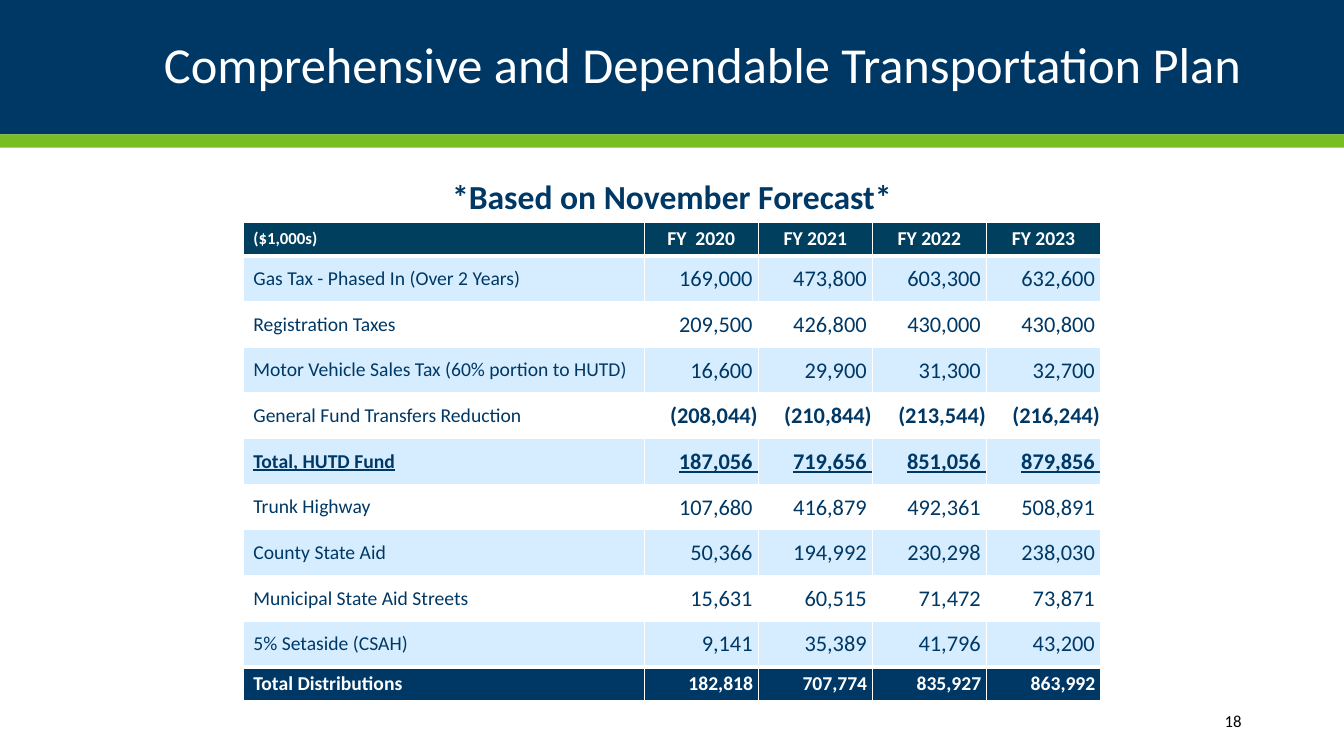
import pptx
import pptx.dml.color
import pptx.enum.shapes
import pptx.enum.text
import pptx.oxml
import pptx.oxml.ns
import pptx.util

Pt = pptx.util.Pt
ALIGN = pptx.enum.text.PP_ALIGN
MIDDLE = pptx.enum.text.MSO_ANCHOR.MIDDLE

NAVY, GREEN, WHITE = "003865", "78BE21", "FFFFFF"
HEADER_FILL, BAND_FILL = "003F5E", "D6EDFF"

YEARS = ["FY  2020", "FY 2021", "FY 2022", "FY 2023"]
FUNDS = [
    ("Gas Tax - Phased In (Over 2 Years)", "169,000 ", "473,800 ", "603,300 ", "632,600 "),
    ("Registration Taxes", "209,500 ", "426,800 ", "430,000 ", "430,800 "),
    ("Motor Vehicle Sales Tax (60% portion to HUTD)", "16,600 ", "29,900 ", "31,300 ", "32,700 "),
    ("General Fund Transfers Reduction", "(208,044)", "(210,844)", "(213,544)", "(216,244)"),
    ("Total, HUTD Fund", "187,056 ", "719,656 ", "851,056 ", "879,856 "),
    ("Trunk Highway", "107,680 ", "416,879 ", "492,361 ", "508,891 "),
    ("County State Aid", "50,366 ", "194,992 ", "230,298 ", "238,030 "),
    ("Municipal State Aid Streets", "15,631 ", "60,515 ", "71,472 ", "73,871 "),
    ("5% Setaside (CSAH)", "9,141 ", "35,389 ", "41,796 ", "43,200 "),
]
TOTALS = ("Total Distributions", "182,818 ", "707,774 ", "835,927 ", "863,992 ")


def rgb(color):
    return pptx.dml.color.RGBColor.from_string(color)


def write(tf, text, size=14, color=NAVY, bold=False, underline=False,
          align=ALIGN.LEFT, spacing=None):
    p = tf.paragraphs[0]
    p.alignment = align
    p.line_spacing = spacing
    r = p.add_run()
    r.text = text
    r.font.name = "Calibri"
    r.font.size = Pt(size)
    r.font.bold = bold
    r.font.underline = underline
    r.font.color.rgb = rgb(color)


def add_bar(s, top, height, color):
    """Draw a full-width band behind the title."""
    sp = s.shapes.add_shape(pptx.enum.shapes.MSO_SHAPE.RECTANGLE,
                            0, Pt(top), Pt(960), Pt(height))
    sp.shadow.inherit = False
    sp.fill.solid()
    sp.fill.fore_color.rgb = rgb(color)
    sp.line.fill.background()
    s.shapes.title.element.addprevious(sp.element)


def add_title(s, text):
    sp = s.shapes.title
    sp.left, sp.top, sp.width, sp.height = Pt(66), Pt(12), Pt(828), Pt(72)
    tf = sp.text_frame
    tf.auto_size = pptx.enum.text.MSO_AUTO_SIZE.NONE
    tf.vertical_anchor = MIDDLE
    write(tf, text, size=36, color=WHITE, align=ALIGN.RIGHT, spacing=0.9)


def add_text(s, left, top, width, height, text, anchor=None, **style):
    tf = s.shapes.add_textbox(Pt(left), Pt(top), Pt(width), Pt(height)).text_frame
    tf.word_wrap = True
    tf.vertical_anchor = anchor
    write(tf, text, **style)


def set_borders(cell, top, bottom):
    tc_pr = cell._tc.get_or_add_tcPr()
    for side, width in (("L", 1), ("R", 1), ("T", top), ("B", bottom)):
        tc_pr.append(pptx.oxml.parse_xml(
            f'<a:ln{side} {pptx.oxml.ns.nsdecls("a")} w="{Pt(width)}">'
            f'<a:solidFill><a:srgbClr val="{WHITE}"/></a:solidFill></a:ln{side}>'))


def fill_row(table, i, texts, fill, label_style, value_style, tight=True, top=1, bottom=1):
    """Write a label and its values; tight narrows the margins of the values."""
    for j, text in enumerate(texts):
        cell = table.cell(i, j)
        cell.vertical_anchor = MIDDLE
        if j and tight:
            cell.margin_left = cell.margin_right = cell.margin_top = Pt(0.5)
            cell.margin_bottom = 0
        set_borders(cell, top, bottom)
        if fill:
            cell.fill.solid()
            cell.fill.fore_color.rgb = rgb(fill)
        else:
            cell.fill.background()
        write(cell.text_frame, text, **(value_style if j else label_style))


def add_funds_table(s):
    widths = [286.4] + [81.5] * len(YEARS)
    heights = [24.3] + [32.6] * len(FUNDS) + [24.3]
    table = s.shapes.add_table(len(heights), len(widths), Pt(173.8), Pt(158.6),
                               Pt(sum(widths)), Pt(sum(heights))).table
    for column, width in zip(table.columns, widths):
        column.width = Pt(width)
    for row, height in zip(table.rows, heights):
        row.height = Pt(height)

    strong = dict(color=WHITE, bold=True)
    fill_row(table, 0, ["($1,000s)"] + YEARS, HEADER_FILL, dict(strong, size=12),
             dict(strong, align=ALIGN.CENTER), tight=False, bottom=3)
    last = len(FUNDS)
    for i, texts in enumerate(FUNDS, start=1):
        is_total = texts[0].startswith("Total")
        emphasis = dict(bold=is_total, underline=is_total)
        value_style = dict(emphasis, size=16, align=ALIGN.RIGHT,
                           bold=is_total or texts[1].startswith("("))
        fill_row(table, i, texts, BAND_FILL if i % 2 else None, emphasis, value_style,
                 top=3 if i == 1 else 1, bottom=3 if i == last else 1)
    fill_row(table, last + 1, TOTALS, NAVY, strong,
             dict(strong, align=ALIGN.RIGHT), top=3)


def main():
    prs = pptx.Presentation()
    prs.slide_width, prs.slide_height = Pt(960), Pt(540)
    s = prs.slides.add_slide(prs.slide_layouts[5])
    add_bar(s, 0, 96, NAVY)
    add_bar(s, 96, 9.4, GREEN)
    add_title(s, "Comprehensive and Dependable Transportation Plan")
    add_text(s, 779, 500.5, 115, 28.8, "18", anchor=MIDDLE, size=12,
             color="000000", align=ALIGN.RIGHT)
    add_funds_table(s)
    add_text(s, 185, 122.4, 590, 36, "*Based on November Forecast*", size=24,
             bold=True, align=ALIGN.CENTER)
    prs.save("out.pptx")


if __name__ == "__main__":
    main()
